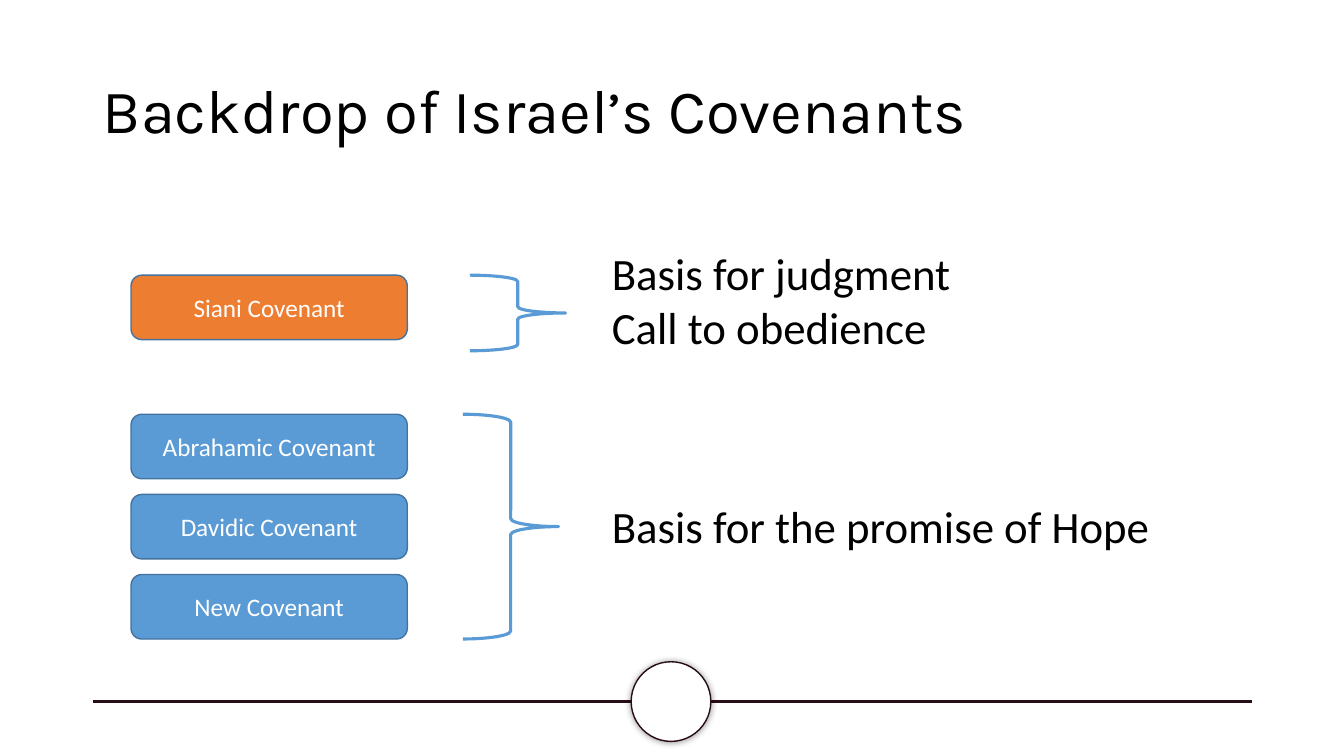
from lxml import etree
from pptx import Presentation
from pptx.dml.color import RGBColor
from pptx.enum import shapes as sh, text as tx
from pptx.oxml import parse_xml
from pptx.oxml.ns import nsdecls, qn
from pptx.util import Inches, Pt

# Content
TITLE = "Backdrop of Israel’s Covenants"
HEX = {"blue": "5B9BD5", "orange": "ED7D31", "edge": "43739E",
       "wine": "290D15", "white": "FFFFFF", "black": "000000"}
# top, fill, covenants, brace (left, height), note lines, note (top, width, height)
GROUPS = [
    (4.11, "blue", ["Abrahamic Covenant", "Davidic Covenant", "New Covenant"],
     (4.59, 2.23), ["Basis for the promise of Hope"], (4.9, 5.59, 0.64)),
    (2.73, "orange", ["Siani Covenant"],
     (4.66, 0.75), ["Basis for judgment", "Call to obedience"], (2.39, 3.6, 1.18)),
]
BOX_X, BOX_W, BOX_H, STEP = 1.3, 2.74, 0.64, 0.795
BRACE_W, NOTE_X = 0.95, 5.97
RULE_Y, RULE_L, RULE_R = 6.96, 0.92, 12.42
RING = 0.79


def rgb(name):
    return RGBColor.from_string(HEX[name])


def write(par, words, size, color, font="Calibri"):
    run = par.add_run()
    run.text = words
    run.font.size = Pt(size)
    run.font.name = font
    run.font.color.rgb = rgb(color)


def draw(kind, box, fill, edge, width):
    shape = slide.shapes.add_shape(kind, *map(Inches, box))
    shape.shadow.inherit = False
    if fill:
        shape.fill.solid()
        shape.fill.fore_color.rgb = rgb(fill)
    else:
        shape.fill.background()
    shape.line.color.rgb = rgb(edge)
    shape.line.width = Pt(width)
    return shape


deck = Presentation()
deck.slide_width, deck.slide_height = Inches(13.33), Inches(7.5)
slide = deck.slides.add_slide(deck.slide_layouts[5])
slide.background.fill.solid()
slide.background.fill.fore_color.rgb = rgb("white")

# Footer rule and ring
rule = slide.shapes.add_connector(
    sh.MSO_CONNECTOR.STRAIGHT, Inches(RULE_L), Inches(RULE_Y),
    Inches(RULE_R), Inches(RULE_Y))
rule.line.color.rgb = rgb("wine")
rule.line.width = Pt(2.25)
etree.SubElement(rule._element.spPr, qn("a:effectLst"))
ring = draw(sh.MSO_SHAPE.OVAL,
            (6.26, RULE_Y - RING / 2, RING, RING), "white", "wine", 1)
ring._element.spPr.find(qn("a:effectLst")).append(parse_xml(
    f'<a:outerShdw {nsdecls("a")} blurRad="{Pt(5)}" dist="0" dir="0">'
    f'<a:srgbClr val="{HEX["black"]}"><a:alpha val="40000"/></a:srgbClr>'
    '</a:outerShdw>'))

# Title
title = slide.shapes.title
title.left, title.top, title.width, title.height = map(
    Inches, (0.92, 0.4, 11.5, 1.45))
frame = title.text_frame
frame.word_wrap = True
frame.vertical_anchor = tx.MSO_ANCHOR.MIDDLE
head = frame.paragraphs[0]
head.alignment = tx.PP_ALIGN.LEFT
head.line_spacing = 0.9
write(head, TITLE, 44, "black", "Karla")

for top, fill, names, (left, tall), lines, (note_y, wide, high) in GROUPS:
    # Covenant boxes
    for i, name in enumerate(names):
        box = draw(sh.MSO_SHAPE.ROUNDED_RECTANGLE,
                   (BOX_X, top + i * STEP, BOX_W, BOX_H), fill, "edge", 1)
        box.text_frame.vertical_anchor = tx.MSO_ANCHOR.MIDDLE
        par = box.text_frame.paragraphs[0]
        par.alignment = tx.PP_ALIGN.CENTER
        write(par, name, 18, "white")
    # Brace
    draw(sh.MSO_SHAPE.RIGHT_BRACE, (left, top, BRACE_W, tall), None, "blue", 2.25)
    # Note
    note = slide.shapes.add_textbox(
        *map(Inches, (NOTE_X, note_y, wide, high))).text_frame
    note.word_wrap = False
    note.auto_size = tx.MSO_AUTO_SIZE.SHAPE_TO_FIT_TEXT
    for i, line in enumerate(lines):
        par = note.add_paragraph() if i else note.paragraphs[0]
        write(par, line, 32, "black")

deck.save("out.pptx")
